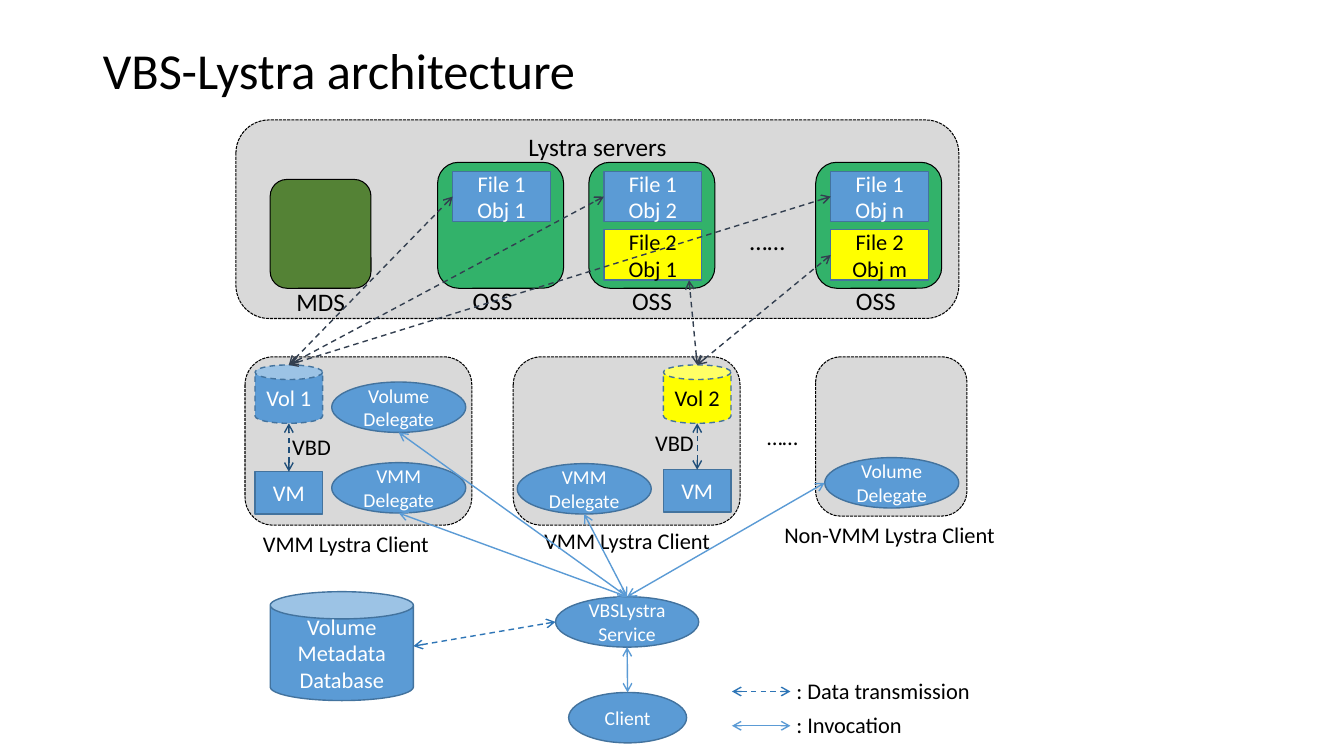
from lxml import etree
from pptx import Presentation
from pptx import util as u
from pptx.dml.color import RGBColor
from pptx.enum import dml, shapes, text
from pptx.oxml.ns import qn

FONT = "Calibri"
BLACK, WHITE = "000000", "FFFFFF"
BLUE, EDGE, YELLOW = "5B9BD5", "43739E", "FFFF00"
GREY, GREEN, OLIVE = "D9D9D9", "32B26A", "548235"
DATA_LINE, VBD_LINE, DATABASE_LINE = "333F50", "1F4E79", "2E75B6"
DASH, FINE_DASH = dml.MSO_LINE.DASH, dml.MSO_LINE.SQUARE_DOT
KIND = shapes.MSO_SHAPE
DELEGATE_SIZE = (1.33, 0.5)
TOP, BOTTOM, LEFT, RIGHT = (0.5, 0), (0.5, 1), (0, 0.5), (1, 0.5)


def color(value):
    return RGBColor.from_string(value)


def inches(*values):
    return [u.Inches(value) for value in values]


def write(frame, words, size, ink, align=text.PP_ALIGN.LEFT, spacing=None):
    frame.word_wrap = True
    for index, line in enumerate(words.split("\n")):
        paragraph = frame.paragraphs[0] if index == 0 else frame.add_paragraph()
        paragraph.alignment = align
        if spacing:
            paragraph.line_spacing = spacing
        run = paragraph.add_run()
        run.text = line
        run.font.name = FONT
        run.font.size = u.Pt(size)
        run.font.color.rgb = color(ink)


def add_block(slide, kind, box, fill=BLUE, words="", size=16, edge=EDGE, width=1, dash=None):
    shape = slide.shapes.add_shape(kind, *inches(*box))
    shape.shadow.inherit = False
    shape.fill.solid()
    shape.fill.fore_color.rgb = color(fill)
    shape.line.color.rgb = color(edge)
    shape.line.width = u.Pt(width)
    if dash:
        shape.line.dash_style = dash
    if words:
        shape.text_frame.vertical_anchor = text.MSO_ANCHOR.MIDDLE
        ink = WHITE if fill == BLUE else BLACK
        write(shape.text_frame, words, size, ink, text.PP_ALIGN.CENTER)
    return shape


def add_panel(slide, box, fill=GREY, dash=FINE_DASH):
    return add_block(slide, KIND.ROUNDED_RECTANGLE, box, fill, edge=BLACK, width=0.75, dash=dash)


def add_label(slide, box, words, size=16):
    label = slide.shapes.add_textbox(*inches(*box))
    write(label.text_frame, words, size, BLACK)


def spot(shape, place):
    """Point on a shape, given as fractions of its width and height."""
    return (shape.left + int(shape.width * place[0]),
            shape.top + int(shape.height * place[1]))


def add_arrow(slide, start, end, ink, dash=None):
    arrow = slide.shapes.add_connector(shapes.MSO_CONNECTOR.STRAIGHT, *start, *end)
    arrow.line.color.rgb = color(ink)
    arrow.line.width = u.Pt(1)
    if dash:
        arrow.line.dash_style = dash
    line = arrow.line._get_or_add_ln()
    for tag in ("a:headEnd", "a:tailEnd"):
        etree.SubElement(line, qn(tag), type="arrow")
    etree.SubElement(arrow._element.spPr, qn("a:effectLst"))


def add_title(slide, box):
    title = slide.shapes.title
    title.left, title.top, title.width, title.height = inches(*box)
    title.text_frame.auto_size = text.MSO_AUTO_SIZE.NONE
    title.text_frame.vertical_anchor = text.MSO_ANCHOR.MIDDLE
    write(title.text_frame, "VBS-Lystra architecture", 36, BLACK, spacing=0.9)


def add_servers(slide, box):
    """Draw the server panel and return its file objects by name."""
    left, top, width, height = box
    panel = add_panel(slide, box)
    panel.text_frame.vertical_anchor = text.MSO_ANCHOR.TOP
    write(panel.text_frame, "Lystra servers", 18, BLACK, text.PP_ALIGN.CENTER, 0.9)

    # Metadata server
    add_panel(slide, (left + 0.34, top + 0.59, 1, 1.08), OLIVE, None)
    add_label(slide, (left + 0.5, top + 1.6, 0.75, 0.4), "MDS", 18)

    # Storage servers: offset, label offset, first object, second object
    objects = {}
    for offset, label_offset, first, second in (
            (2, 2.25, "Obj 1", None),
            (3.5, 3.83, "Obj 2", "Obj 1"),
            (5.75, 6.05, "Obj n", "Obj m")):
        x = left + offset
        add_panel(slide, (x, top + 0.42, 1.25, 1.25), GREEN, None)
        add_label(slide, (left + label_offset, top + 1.59, 0.75, 0.4), "OSS", 18)
        rows = (("File 1", first, 0.51, BLUE), ("File 2", second, 1.09, YELLOW))
        for file, part, drop, fill in rows:
            if part:
                objects[file, part] = add_block(
                    slide, KIND.RECTANGLE, (x + 0.15, top + drop, 0.97, 0.5),
                    fill, f"{file}\n{part}")
    add_label(slide, (left + 5, top + 1, 0.67, 0.4), "……", 18)
    return objects


def add_delegate(slide, left, top, words):
    return add_block(slide, KIND.OVAL, (left, top, *DELEGATE_SIZE), words=words, size=14)


def add_client(slide, box, label, label_place, delegates, volume=None):
    """Draw one client; return its delegates and its volume, if any."""
    left, top, width, height = box
    add_panel(slide, box)
    ovals = [add_delegate(slide, left + x, top + y, words) for words, x, y in delegates]
    add_label(slide, (left + label_place[0], top + height + label_place[1], 2.42, 0.37), label)
    if not volume:
        return ovals, None

    # Volume linked to its virtual machine
    name, fill, x, vm_drop, vbd_x, vbd_drop = volume
    disk = add_block(slide, KIND.CAN, (left + x, top + 0.08, 0.67, 0.58), fill, name, dash=DASH)
    machine = add_block(slide, KIND.RECTANGLE, (left + x, top + vm_drop, 0.67, 0.42), words="VM")
    add_arrow(slide, spot(machine, TOP), spot(disk, BOTTOM), VBD_LINE, DASH)
    add_label(slide, (left + vbd_x, top + vbd_drop, 0.62, 0.37), "VBD")
    return ovals, disk


def add_service(slide, box):
    """Draw the database, service and client; return the service."""
    left, top, width, height = box
    database = add_block(slide, KIND.CAN, (left, top, 1.42, 1.08),
                         words="Volume Metadata Database")
    service = add_block(slide, KIND.OVAL, (left + width - 1.42, top + 0.05, 1.42, 0.5),
                        words="VBSLystra\nService", size=14)
    client = add_block(slide, KIND.OVAL, (left + width - 1.29, top + height - 0.5, 1.17, 0.5),
                       words="Client", size=14)
    add_arrow(slide, spot(client, TOP), spot(service, BOTTOM), BLUE)
    add_arrow(slide, spot(database, RIGHT), spot(service, LEFT), DATABASE_LINE, DASH)
    return service


def add_legend(slide, box):
    left, top, width, height = box
    entries = ((": Data transmission", DATABASE_LINE, DASH), (": Invocation", BLUE, None))
    for row, (words, ink, dash) in enumerate(entries):
        y = top + row * height / len(entries)
        add_arrow(slide, inches(left, y + 0.19), inches(left + 0.58, y + 0.19), ink, dash)
        add_label(slide, (left + 0.54, y, width - 0.54, 0.37), words)


def add_architecture(slide):
    objects = add_servers(slide, (2.34, 1.19, 7.17, 1.97))

    # Clients
    first, volume_1 = add_client(
        slide, (2.43, 3.54, 2.25, 1.67), "VMM Lystra Client", (0.08, 0),
        (("Volume Delegate", 0.86, 0.25), ("VMM Delegate", 0.86, 1.05)),
        ("Vol 1", BLUE, 0.1, 1.14, 0.37, 0.71))
    second, volume_2 = add_client(
        slide, (5.09, 3.54, 2.25, 1.67), "VMM Lystra Client", (0.21, -0.03),
        (("VMM Delegate", 0.04, 1.06),),
        ("Vol 2", YELLOW, 1.49, 1.12, 1.31, 0.67))
    third, _ = add_client(
        slide, (8.09, 3.54, 1.5, 1.58), "Non-VMM Lystra Client", (-0.41, 0),
        (("Volume Delegate", 0.09, 1),))
    add_label(slide, (7.51, 4.15, 0.58, 0.37), "……")

    service = add_service(slide, (2.68, 5.87, 4.25, 1.5))

    # Data transmission from volumes to file objects
    for volume, target, place in (
            (volume_1, ("File 1", "Obj 1"), LEFT),
            (volume_1, ("File 1", "Obj 2"), LEFT),
            (volume_1, ("File 1", "Obj n"), LEFT),
            (volume_2, ("File 2", "Obj 1"), (0.87, 1)),
            (volume_2, ("File 2", "Obj m"), LEFT)):
        add_arrow(slide, spot(volume, TOP), spot(objects[target], place), DATA_LINE, DASH)

    # Invocation from the service to the delegates
    for delegate in first + second:
        add_arrow(slide, spot(service, TOP), spot(delegate, BOTTOM), BLUE)
    add_arrow(slide, spot(service, TOP), spot(third[0], LEFT), BLUE)


def main():
    presentation = Presentation()
    presentation.slide_width, presentation.slide_height = inches(13.33, 7.5)
    slide = presentation.slides.add_slide(presentation.slide_layouts[5])
    add_title(slide, (0.92, 0, 11.82, 1.45))
    add_architecture(slide)
    add_legend(slide, (7.26, 6.67, 2.51, 0.68))
    presentation.save("out.pptx")


if __name__ == "__main__":
    main()
